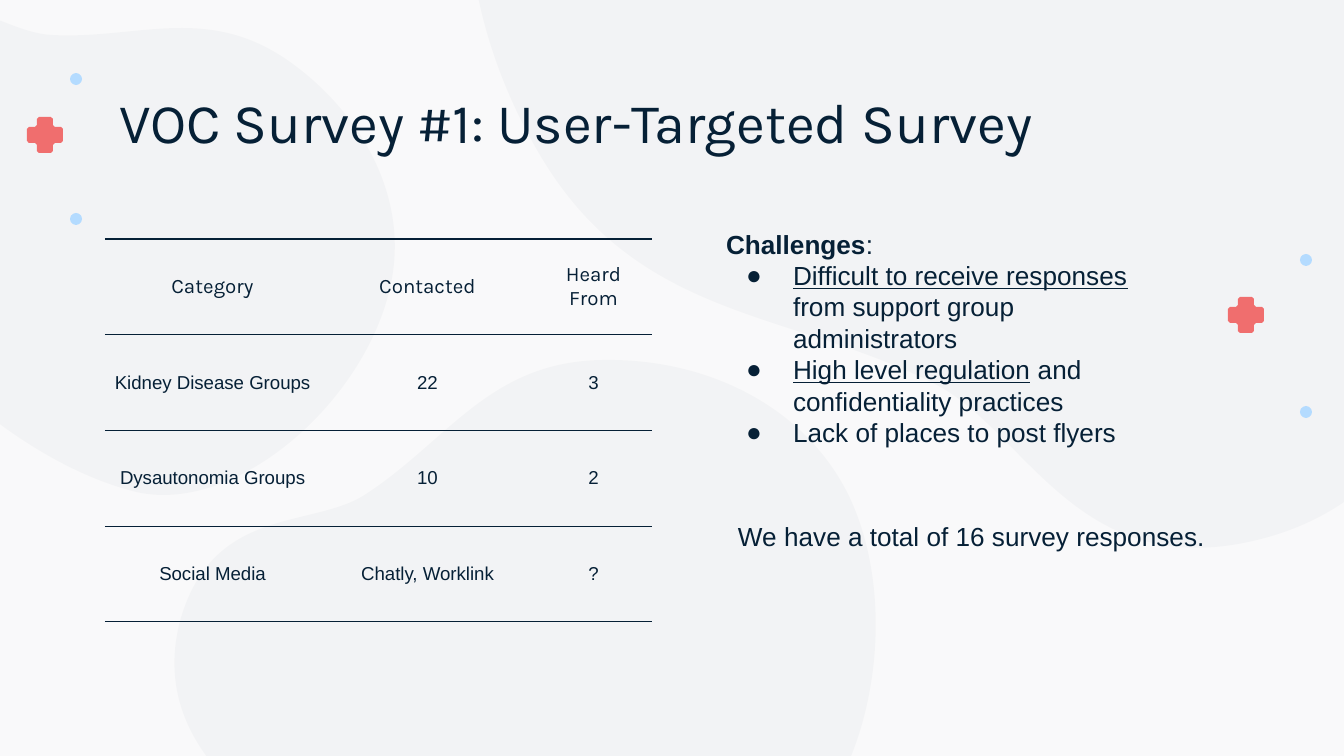
from lxml.etree import SubElement
from pptx import Presentation
from pptx.dml.color import RGBColor
from pptx.enum.shapes import MSO_SHAPE
from pptx.enum.text import MSO_ANCHOR, MSO_AUTO_SIZE, PP_ALIGN
from pptx.oxml import parse_xml
from pptx.oxml.ns import nsdecls, qn
from pptx.util import Pt

EMU_PER_PX = 914400 / 134.4
COLORS = {"paper": "F9F9FA", "blob": "BEC3C9", "cross": "F06E6E",
          "dot": "B4DBFF", "ink": "062036"}

# Each blob: start point, then cubic curves (two controls and an end)
BLOBS = [
    ((-144, 274), [(-91, 356, 19, 461, 132, 491), (235, 519, 371, 398, 392, 278),
                   (407, 194, 360, 112, 290, 62), (207, 3, 137, 40, 51, 35),
                   (-3, 32, -59, -31, -137, 31), (-226, 101, -180, 218, -144, 274)]),
    ((1461, 120), [(1433, -63, 1320, -332, 1148, -472), (989, -599, 659, -495, 530, -302),
                   (438, -164, 456, 13, 540, 155), (638, 321, 790, 310, 935, 384),
                   (1027, 431, 1078, 586, 1261, 539), (1470, 485, 1480, 246, 1461, 120)]),
    ((339, 852), [(444, 895, 620, 919, 746, 872), (863, 829, 910, 624, 849, 496),
                  (805, 406, 707, 359, 606, 360), (489, 360, 448, 442, 363, 496),
                  (310, 528, 214, 507, 181, 618), (145, 745, 267, 824, 339, 852)]),
]
CROSS_CENTERS = [(45, 135), (1246, 315)]
CROSS_QUARTER = [(6, -18), (8, -16), (8, -10), (10, -8), (16, -8), (18, -6)]
DOTS = [(70, 73), (70, 213), (1300, 254), (1300, 406)]

SURVEY_ROWS = [
    ("Category", "Contacted", "Heard From"),
    ("Kidney Disease Groups", "22", "3"),
    ("Dysautonomia Groups", "10", "2"),
    ("Social Media", "Chatly, Worklink", "?"),
]
COLUMN_WIDTHS = (215, 215, 117)
TABLE_HEIGHT = 383

# Underlined part and plain part of each challenge
CHALLENGES = [
    ("Difficult to receive responses", " from support group administrators"),
    ("High level regulation", " and confidentiality practices"),
    ("", "Lack of places to post flyers"),
]


def px(value):
    return round(value * EMU_PER_PX)


def color(name):
    return RGBColor.from_string(COLORS[name])


def paint(shape, name):
    shape.shadow.inherit = False
    shape.fill.solid()
    shape.fill.fore_color.rgb = color(name)
    shape.line.fill.background()


def style(paragraph, size, font="Arial"):
    paragraph.font.size = Pt(size)
    paragraph.font.name = font
    paragraph.font.color.rgb = color("ink")


def place(shape, left, top, width, height):
    shape.left, shape.top = px(left), px(top)
    shape.width, shape.height = px(width), px(height)


def set_frame(frame, anchor):
    frame.word_wrap = True
    frame.auto_size = MSO_AUTO_SIZE.NONE
    frame.vertical_anchor = anchor
    frame.margin_left = frame.margin_right = px(13)
    frame.margin_top = frame.margin_bottom = px(13)


def add_outline(slide, points, name):
    corners = [(px(x), px(y)) for x, y in points]
    builder = slide.shapes.build_freeform(*corners[0])
    builder.add_line_segments(corners[1:], close=True)
    shape = builder.convert_to_shape()
    paint(shape, name)
    return shape


def bend_segments(shape):
    """Turn every three line segments into one cubic curve."""
    outline = next(shape._element.iter(qn("a:path")))
    lines = outline.findall(qn("a:lnTo"))
    for index in range(0, len(lines) - 2, 3):
        curve = parse_xml(f'<a:cubicBezTo {nsdecls("a")}/>')
        lines[index].addprevious(curve)
        for line in lines[index:index + 3]:
            curve.append(line[0])
            outline.remove(line)


def add_blob(slide, start, curves):
    points = [start]
    for curve in curves:
        points += zip(curve[::2], curve[1::2])
    blob = add_outline(slide, points, "blob")
    bend_segments(blob)
    tint = blob._element.spPr.find(qn("a:solidFill"))[0]
    SubElement(tint, qn("a:alpha"), val="10000")


def add_cross(slide, center_x, center_y):
    points, quarter = [], CROSS_QUARTER
    for _ in range(4):
        points += [(center_x + x, center_y + y) for x, y in quarter]
        quarter = [(-y, x) for x, y in quarter]
    add_outline(slide, points, "cross")


def add_dot(slide, left, top):
    dot = slide.shapes.add_shape(MSO_SHAPE.OVAL, px(left), px(top), px(12), px(12))
    paint(dot, "dot")


def set_borders(cell):
    ink = f'<a:solidFill><a:srgbClr val="{COLORS["ink"]}"/></a:solidFill>'
    fills = {"lnL": "<a:noFill/>", "lnR": "<a:noFill/>", "lnT": ink, "lnB": ink}
    properties = cell._tc.get_or_add_tcPr()
    for index, (side, fill) in enumerate(fills.items()):
        properties.insert(index, parse_xml(
            f'<a:{side} {nsdecls("a")} w="{Pt(0.75)}">{fill}</a:{side}>'))


def add_survey_table(slide):
    table = slide.shapes.add_table(
        len(SURVEY_ROWS), len(COLUMN_WIDTHS), px(105), px(239),
        px(sum(COLUMN_WIDTHS)), px(TABLE_HEIGHT)).table
    table.first_row = table.horz_banding = False
    for column, width in zip(table.columns, COLUMN_WIDTHS):
        column.width = px(width)
    for row_index, values in enumerate(SURVEY_ROWS):
        for column_index, value in enumerate(values):
            cell = table.cell(row_index, column_index)
            cell.text = value
            cell.vertical_anchor = MSO_ANCHOR.MIDDLE
            cell.margin_left = cell.margin_right = px(6)
            cell.margin_top = cell.margin_bottom = px(4)
            cell.fill.background()
            set_borders(cell)
            paragraph = cell.text_frame.paragraphs[0]
            paragraph.alignment = PP_ALIGN.CENTER
            style(paragraph, *((11, "Karla") if row_index == 0 else (10, "Arial")))


def format_challenge(paragraph, bullet):
    properties = paragraph._p.get_or_add_pPr()
    properties.set("marL", str(px(67) if bullet else 0))
    properties.set("indent", str(px(-47) if bullet else 0))
    paragraph.line_spacing = 1.0
    paragraph.space_before = Pt(0)
    if bullet:
        tint = SubElement(properties, qn("a:buClr"))
        SubElement(tint, qn("a:srgbClr"), val=COLORS["ink"])
        SubElement(properties, qn("a:buFont"), typeface="Arial")
        SubElement(properties, qn("a:buChar"), char="●")
    else:
        SubElement(properties, qn("a:buNone"))
    style(paragraph, 14)


def add_run(paragraph, text):
    run = paragraph.add_run()
    run.text = text
    return run


def fill_challenges(body):
    place(body, 713, 215, 466, 372)
    frame = body.text_frame
    set_frame(frame, MSO_ANCHOR.TOP)
    heading = frame.paragraphs[0]
    add_run(heading, "Challenges").font.bold = True
    add_run(heading, ":")
    format_challenge(heading, bullet=False)
    for underlined, plain in CHALLENGES:
        challenge = frame.add_paragraph()
        if underlined:
            add_run(challenge, underlined).font.underline = True
        add_run(challenge, plain)
        format_challenge(challenge, bullet=True)


def fill_title(title):
    place(title, 106, 80, 1133, 83)
    set_frame(title.text_frame, MSO_ANCHOR.MIDDLE)
    title.text_frame.text = "VOC Survey #1: User-Targeted Survey"
    heading = title.text_frame.paragraphs[0]
    heading.alignment = PP_ALIGN.LEFT
    style(heading, 30, "Karla")


def add_total(slide):
    total = slide.shapes.add_textbox(px(725), px(507), px(556), px(59))
    set_frame(total.text_frame, MSO_ANCHOR.TOP)
    total.text_frame.text = "We have a total of 16 survey responses."
    style(total.text_frame.paragraphs[0], 14)


def main():
    deck = Presentation()
    deck.slide_width, deck.slide_height = px(1344), px(756)
    slide = deck.slides.add_slide(deck.slide_layouts[1])
    slide.background.fill.solid()
    slide.background.fill.fore_color.rgb = color("paper")
    title, body = slide.placeholders

    # Background decoration
    for start, curves in BLOBS:
        add_blob(slide, start, curves)
    for center in CROSS_CENTERS:
        add_cross(slide, *center)
    for corner in DOTS:
        add_dot(slide, *corner)

    # Content, with the placeholders raised above the decoration
    for placeholder in (title, body):
        slide.shapes._spTree.append(placeholder._element)
    fill_title(title)
    add_survey_table(slide)
    fill_challenges(body)
    add_total(slide)
    deck.save("out.pptx")


if __name__ == "__main__":
    main()
